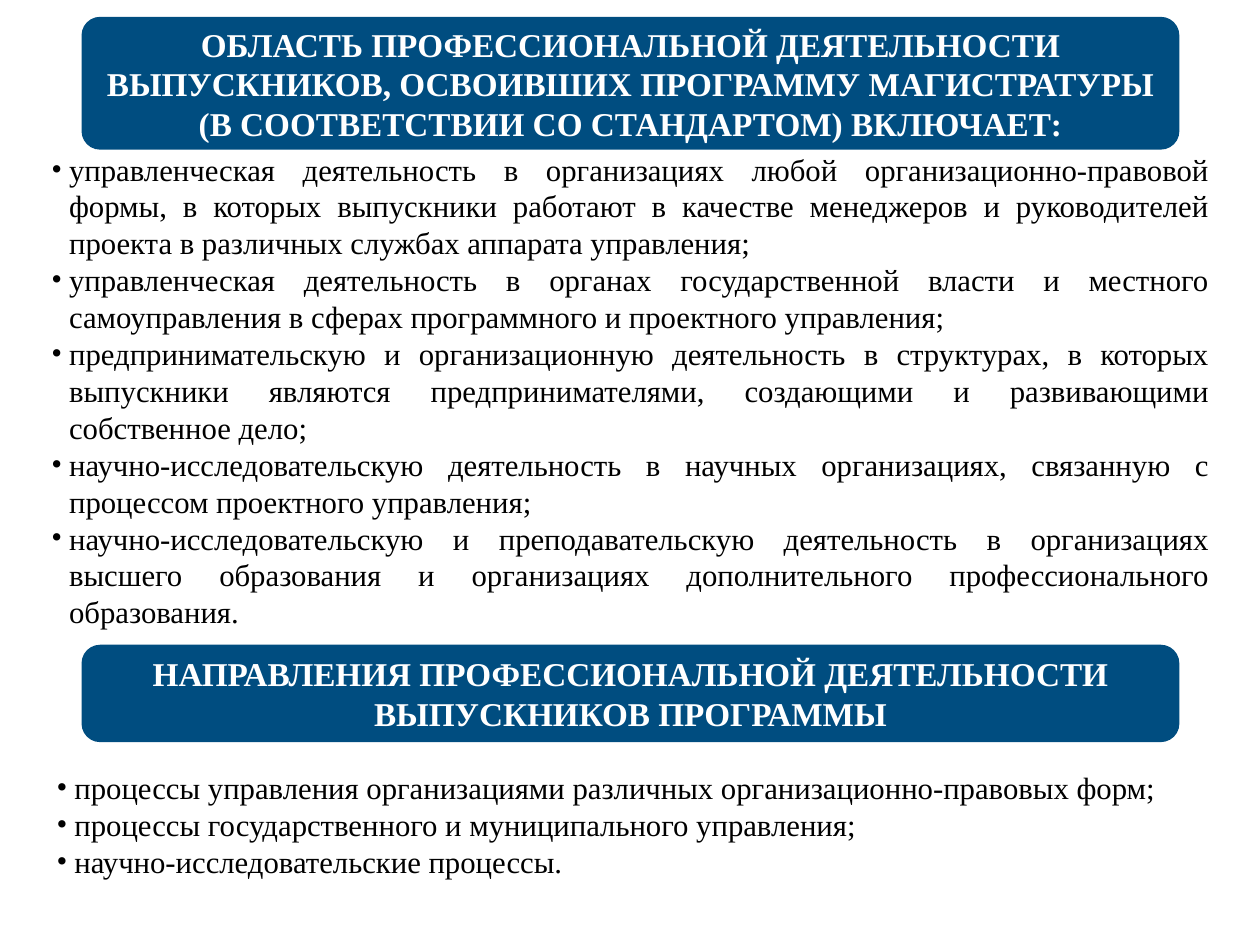
from lxml.etree import SubElement
from pptx import Presentation
from pptx.dml.color import RGBColor
from pptx.enum.shapes import MSO_SHAPE
from pptx.enum.text import MSO_ANCHOR, MSO_AUTO_SIZE, PP_ALIGN
from pptx.oxml.ns import qn
from pptx.util import Inches, Pt

COLORS = {"banner": "004D80", "heading": "FFFFFF", "body": "000000"}
FONT = "Times New Roman"
INSET = 0.06
CORNER_RADIUS = 0.21
HANGING_INDENT = 0.2

SCOPE_HEADING = (
    "ОБЛАСТЬ ПРОФЕССИОНАЛЬНОЙ ДЕЯТЕЛЬНОСТИ ВЫПУСКНИКОВ, ОСВОИВШИХ "
    "ПРОГРАММУ МАГИСТРАТУРЫ (В СООТВЕТСТВИИ СО СТАНДАРТОМ) ВКЛЮЧАЕТ:"
)
SCOPE_ITEMS = [
    "управленческая деятельность в организациях любой организационно-правовой формы, "
    "в которых выпускники работают в качестве менеджеров и руководителей проекта "
    "в различных службах аппарата управления;",
    "управленческая деятельность в органах государственной власти и местного "
    "самоуправления в сферах программного и проектного управления;",
    "предпринимательскую и организационную деятельность в структурах, в которых "
    "выпускники являются предпринимателями, создающими и развивающими собственное дело;",
    "научно-исследовательскую деятельность в научных организациях, связанную "
    "с процессом проектного управления;",
    "научно-исследовательскую и преподавательскую деятельность в организациях высшего "
    "образования и организациях дополнительного профессионального образования.",
]
DIRECTIONS_HEADING = "НАПРАВЛЕНИЯ ПРОФЕССИОНАЛЬНОЙ ДЕЯТЕЛЬНОСТИ ВЫПУСКНИКОВ ПРОГРАММЫ"
DIRECTION_ITEMS = [
    "процессы управления организациями различных организационно-правовых форм;",
    "процессы государственного и муниципального управления;",
    "научно-исследовательские процессы.",
]

BANNER_LEFT, BANNER_WIDTH = 0.92, 12.39
LIST_WIDTH = 13.18


def add_bullet(para):
    properties = para._p.get_or_add_pPr()
    properties.set("marL", str(Inches(HANGING_INDENT)))
    properties.set("indent", str(-Inches(HANGING_INDENT)))
    SubElement(properties, qn("a:buFont")).set("typeface", FONT)
    SubElement(properties, qn("a:buChar")).set("char", "•")


def write_text(box, lines, size, color, align, bold=False, bullets=False):
    frame = box.text_frame
    frame.word_wrap = True
    frame.auto_size = MSO_AUTO_SIZE.NONE
    frame.vertical_anchor = MSO_ANCHOR.MIDDLE
    frame.margin_left = frame.margin_right = Inches(INSET)
    frame.margin_top = frame.margin_bottom = Inches(INSET)
    for index, line in enumerate(lines):
        para = frame.add_paragraph() if index else frame.paragraphs[0]
        para.alignment = align
        if bullets:
            add_bullet(para)
        span = para.add_run()
        span.text = line
        span.font.name = FONT
        span.font.size = Pt(size)
        span.font.bold = bold
        span.font.color.rgb = RGBColor.from_string(COLORS[color])


def add_banner(page, top, height):
    banner = page.shapes.add_shape(
        MSO_SHAPE.ROUNDED_RECTANGLE,
        Inches(BANNER_LEFT), Inches(top), Inches(BANNER_WIDTH), Inches(height),
    )
    banner.adjustments[0] = CORNER_RADIUS / height
    banner.fill.solid()
    banner.fill.fore_color.rgb = RGBColor.from_string(COLORS["banner"])
    banner.line.fill.background()
    banner.shadow.inherit = False
    return banner


def write_heading(box, text):
    write_text(box, [text], size=27, color="heading", align=PP_ALIGN.CENTER, bold=True)


def add_list(page, items, left, top, height):
    box = page.shapes.add_textbox(
        Inches(left), Inches(top), Inches(LIST_WIDTH), Inches(height)
    )
    write_text(box, items, size=25, color="body", align=PP_ALIGN.JUSTIFY, bullets=True)


def main():
    deck = Presentation()
    deck.slide_width, deck.slide_height = Inches(14.22), Inches(10.67)
    page = deck.slides.add_slide(deck.slide_layouts[5])

    scope_banner = add_banner(page, top=0.19, height=1.5)
    title = page.shapes.title
    title.left, title.top = scope_banner.left + Inches(INSET), Inches(0.25)
    title.width, title.height = Inches(BANNER_WIDTH - 2 * INSET), Inches(1.39)
    write_heading(title, SCOPE_HEADING)
    title.element.addprevious(scope_banner.element)  # banner lies behind the title

    add_list(page, SCOPE_ITEMS, left=0.52, top=1.83, height=5.15)
    directions_banner = add_banner(page, top=7.28, height=1.1)
    write_heading(directions_banner, DIRECTIONS_HEADING)
    add_list(page, DIRECTION_ITEMS, left=0.58, top=8.68, height=1.26)

    deck.save("out.pptx")


if __name__ == "__main__":
    main()
